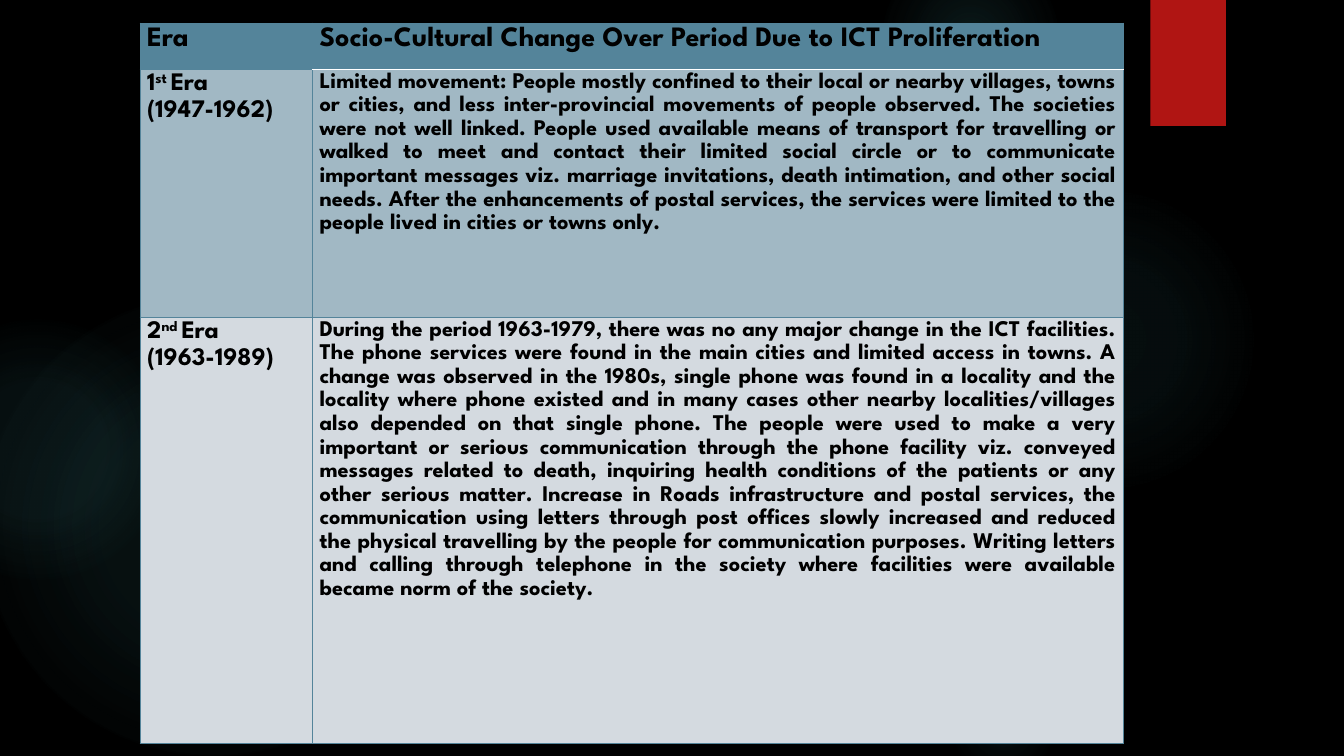
"""Build a slide with a table of socio-cultural change by era."""
from lxml import etree
from pptx import Presentation
from pptx.dml.color import RGBColor
from pptx.enum.shapes import MSO_SHAPE
from pptx.enum.text import PP_ALIGN
from pptx.oxml import parse_xml
from pptx.oxml.ns import nsdecls, qn
from pptx.util import Inches, Pt

COLORS = {
    "background": "000000",
    "glow": "50B9C1",
    "tab": "B01513",
    "header": "54849A",
    "first_era": "A1B8C4",
    "second_era": "D4DAE0",
    "border": "54849A",
    "rule": "FFFFFF",
    "text": "000000",
}
FONT = "League Spartan"

GLOWS = [
    (-0.17, 2.92, 4.58, [(0, 10), (36, 8), (75, 0)]),
    (-0.92, 3.17, 2.58, [(0, 8), (36, 8), (72, 0)]),
    (9.41, 1.83, 3.08, [(0, 7), (36, 6), (69, 0)]),
    (8.75, -0.5, 1.75, [(0, 14), (36, 7), (73, 0)]),
    (9.41, 6.67, 1.08, [(0, 11), (30, 5), (67, 0)]),
]

FIRST_ERA = [
    "Limited movement: People mostly confined to their local or nearby villages, "
    "towns or cities, and less inter-provincial movements of people observed.",
    "The societies were not well linked.",
    "People used available means of transport for travelling or walked to meet and "
    "contact their limited social circle or to communicate important messages viz. "
    "marriage invitations, death intimation, and other social needs.",
    "After the enhancements of postal services, the services were limited to the "
    "people lived in cities or towns only.",
]
SECOND_ERA = [
    "During the period 1963-1979, there was no any major change in the ICT facilities.",
    "The phone services were found in the main cities and limited access in towns.",
    "A change was observed in the 1980s, single phone was found in a locality and the "
    "locality where phone existed and in many cases other nearby localities/villages "
    "also depended on that single phone.",
    "The people were used to make a very important or serious communication through "
    "the phone facility viz. conveyed messages related to death, inquiring health "
    "conditions of the patients or any other serious matter.",
    "Increase in Roads infrastructure and postal services, the communication using "
    "letters through post offices slowly increased and reduced the physical travelling "
    "by the people for communication purposes.",
    "Writing letters and calling through telephone in the society where facilities "
    "were available became norm of the society.",
]

ROWS = [
    ("header", 0.46, 20, 20, [["Era"]],
     ["Socio-Cultural Change Over Period Due to ICT Proliferation"]),
    ("first_era", 2.46, 18, 16, [["1", "st ", "Era"], ["(1947-1962)"]], FIRST_ERA),
    ("second_era", 4.23, 18, 16, [["2", "nd ", "Era"], ["(1963-1989)"]], SECOND_ERA),
]


def write_cell(cell, paragraphs, size, fill):
    cell.fill.solid()
    cell.fill.fore_color.rgb = RGBColor.from_string(COLORS[fill])
    cell.margin_left = cell.margin_right = Inches(0.07)
    cell.margin_top = cell.margin_bottom = 0
    tf = cell.text_frame
    for i, runs in enumerate(paragraphs):
        p = tf.add_paragraph() if i else tf.paragraphs[0]
        p.alignment = PP_ALIGN.JUSTIFY
        p.line_spacing = 1.15
        p.font.name = FONT
        p.font.size = Pt(size)
        p.font.bold = True
        p.font.color.rgb = RGBColor.from_string(COLORS["text"])
        for j, text in enumerate(runs):
            r = p.add_run()
            r.text = text
            if j == 1:
                r._r.get_or_add_rPr().set("baseline", "30000")


def set_borders(cell, white_side):
    tcPr = cell._tc.get_or_add_tcPr()
    for i, side in enumerate(("lnL", "lnR", "lnT", "lnB")):
        color, width = ("rule", 1.5) if side == white_side else ("border", 0.75)
        ln = etree.Element(qn(f"a:{side}"), w=str(Pt(width)))
        solid = etree.SubElement(ln, qn("a:solidFill"))
        etree.SubElement(solid, qn("a:srgbClr"), val=COLORS[color])
        tcPr.insert(i, ln)


prs = Presentation()
prs.slide_width = Inches(13.33)
prs.slide_height = Inches(7.5)
s = prs.slides.add_slide(prs.slide_layouts[6])
s.background.fill.solid()
s.background.fill.fore_color.rgb = RGBColor.from_string(COLORS["background"])

for left, top, size, stops in GLOWS:
    sp = s.shapes.add_shape(
        MSO_SHAPE.OVAL, Inches(left), Inches(top), Inches(size), Inches(size))
    sp.shadow.inherit = False
    sp.line.fill.background()
    gs = "".join(
        f'<a:gs pos="{pos * 1000}"><a:srgbClr val="{COLORS["glow"]}">'
        f'<a:alpha val="{alpha * 1000}"/></a:srgbClr></a:gs>'
        for pos, alpha in stops)
    grad = parse_xml(
        f'<a:gradFill {nsdecls("a")}><a:gsLst>{gs}</a:gsLst><a:path path="circle">'
        '<a:fillToRect l="50000" t="50000" r="50000" b="50000"/></a:path></a:gradFill>')
    sp._element.spPr.find(qn("a:prstGeom")).addnext(grad)

tab = s.shapes.add_shape(
    MSO_SHAPE.RECTANGLE, Inches(11.41), 0, Inches(0.75), Inches(1.25))
tab.shadow.inherit = False
tab.fill.solid()
tab.fill.fore_color.rgb = RGBColor.from_string(COLORS["tab"])
tab.line.fill.background()

table = s.shapes.add_table(
    len(ROWS), 2, Inches(1.39), Inches(0.23), Inches(9.75), Inches(7.15)).table
table.columns[0].width = Inches(1.71)
table.columns[1].width = Inches(8.04)
white_sides = {(0, 1): "lnB", (1, 1): "lnT"}
for row, (fill, height, era_size, change_size, era, change) in enumerate(ROWS):
    table.rows[row].height = Inches(height)
    write_cell(table.cell(row, 0), era, era_size, fill)
    write_cell(table.cell(row, 1), [[" ".join(change)]], change_size, fill)
    for col in range(2):
        set_borders(table.cell(row, col), white_sides.get((row, col)))

prs.save("out.pptx")
